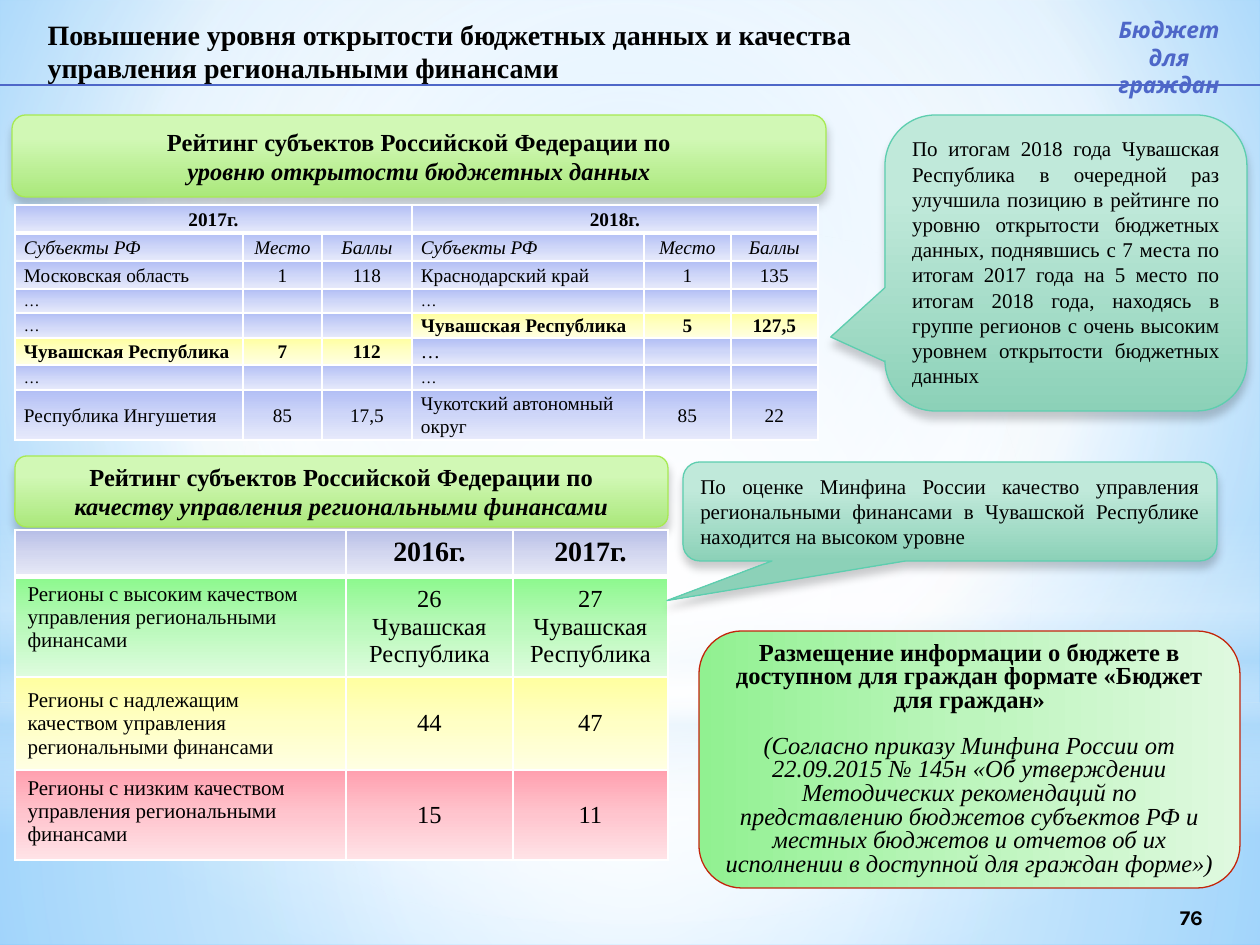
from lxml import etree
from pptx import Presentation, util as u
from pptx.dml.color import RGBColor
from pptx.enum import shapes, text
from pptx.oxml.ns import qn

# Content
TITLE = "Повышение уровня открытости бюджетных данных и качества управления региональными финансами"
BADGE = ["Бюджет", "для граждан"]
PAGE_NUMBER = "76"
RATING = "Рейтинг субъектов Российской Федерации по"
REGION = "Чувашская Республика"
HEADINGS = [  # box, second line
    ((12, 115, 814, 82), "уровню открытости бюджетных данных"),
    ((15, 456, 653, 71), "качеству управления региональными финансами"),
]
CALLOUTS = [  # box, adjustments, text
    ((683, 462, 534, 99), (-0.53, 0.9, 0.17),
     "По оценке Минфина России качество управления региональными финансами в Чувашской Республике "
     "находится на высоком уровне"),
    ((885, 115, 362, 296), (-0.65, 0.25, 0.17),
     "По итогам 2018 года Чувашская Республика в очередной раз улучшила позицию в рейтинге по уровню "
     "открытости бюджетных данных, поднявшись с 7 места по итогам 2017 года на 5 место по итогам 2018 "
     "года, находясь в группе регионов с очень высоким уровнем открытости бюджетных данных"),
]
OPENNESS = [
    ["2017г.", "", "", "2018г.", "", ""],
    ["Субъекты РФ", "Место", "Баллы"] * 2,
    ["Московская область", "1", "118", "Краснодарский край", "1", "135"],
    ["…", "", "", "…", "", ""],
    ["…", "", "", REGION, "5", "127,5"],
    [REGION, "7", "112", "…", "", ""],
    ["…", "", "", "…", "", ""],
    ["Республика Ингушетия", "85", "17,5", "Чукотский автономный округ", "85", "22"],
]
QUALITY = [  # fill, cells
    ("header", ["", "2016г.", "2017г."]),
    ("green", ["Регионы с высоким качеством управления региональными финансами",
               "26\n" + REGION, "27\n" + REGION]),
    ("yellow", ["Регионы с надлежащим качеством управления региональными финансами", "44", "47"]),
    ("red", ["Регионы с низким качеством управления региональными финансами", "15", "11"]),
]
NOTICE = [
    "Размещение информации о бюджете в доступном для граждан формате «Бюджет для граждан»",
    "(Согласно приказу Минфина России от 22.09.2015 № 145н «Об утверждении Методических рекомендаций "
    "по представлению бюджетов субъектов РФ и местных бюджетов и отчетов об их исполнении в доступной "
    "для граждан форме»)",
]


class Theme:
    body, accent = "Times New Roman", "Karla"
    black, blue, white = "000000", "4E67C8", "FFFFFF"
    lime_line, mint_line, red_line = "A7EA52", "5DCEAF", "C3260C"
    tiny, small, normal, badge, large, title = 9, 11, 12, 13, 14, 16
    gradients = {  # stops: position, colour, opacity
        "lime": [(28, "D1F8B5"), (100, "AAE87B")],
        "mint": [(28, "C0E9DA"), (100, "8CD1B8")],
        "notice": [(0, "91F191"), (50, "BDF5BD"), (100, "DFF9DF")],
        "blue": [(0, "B2BEF5"), (50, "CED6F8"), (100, "E7EAFB")],
        "header": [(0, "B7BEE7"), (50, "D2D6EF"), (100, "E8EAF7")],
        "green": [(0, "8CF98D"), (50, "BAF9BB"), (100, "DEFCDE")],
        "yellow": [(0, "FFFFA0"), (50, "FFFFC5"), (100, "FFFFE3")],
        "red": [(0, "FFA0AF"), (50, "FFC5CE"), (100, "FFE3E7")],
        "page": [(0, "9ED5FF"), (60, "FFFFFF"), (100, "5BB9FF")],
        "floor": [(0, "FFFFFF", 91), (37, "FFFFFF", 76), (100, "B4DCFA", 79)],
        "sky": [(0, "FFFFFF", 89), (48, "FFFFFF", 62), (100, "B4DCFA", 79)],
        "horizon": [(0, "FFFFFF", 0), (29, "FFFFFF", 30), (45, "B4DCFA", 40),
                    (55, "FFFFFF", 26), (65, "B4DCFA", 60), (100, "FFFFFF", 0)],
        "glow": [(0, "FFFFFF", 100), (56, "FFFFFF", 0)],
    }


Shape, Align, Anchor = shapes.MSO_SHAPE, text.PP_ALIGN, text.MSO_ANCHOR
CENTRE = (50, 50, 50, 50)
BACKDROP = [  # shape, box, gradient, focus
    (Shape.RECTANGLE, (0, 703, 1260, 242), "floor", CENTRE),
    (Shape.RECTANGLE, (0, 0, 1260, 703), "sky", CENTRE),
    (Shape.RECTANGLE, (0, 519, 1260, 315), "horizon", None),
    (Shape.OVAL, (0, 220, 1260, 703), "glow", CENTRE),
]


def px(value):
    return u.Emu(round(value * 914400 / 126))


def add(parent, tag, **attributes):
    return etree.SubElement(parent, qn(tag), {k: str(v) for k, v in attributes.items()})


def add_colour(parent, colour, opacity=100):
    element = add(parent, "a:srgbClr", val=colour)
    if opacity < 100:
        add(element, "a:alpha", val=opacity * 1000)


def paint(fill, properties, name, angle=90, focus=None):
    """Replace a solid fill by a linear gradient, or a circular one around focus."""
    fill.solid()
    solid = properties.find(qn("a:solidFill"))
    gradient = etree.Element(qn("a:gradFill"), rotWithShape="1")
    stops = add(gradient, "a:gsLst")
    for position, *colour in Theme.gradients[name]:
        add_colour(add(stops, "a:gs", pos=position * 1000), *colour)
    if focus:
        circle = add(gradient, "a:path", path="circle")
        add(circle, "a:fillToRect", **{side: v * 1000 for side, v in zip("ltrb", focus)})
    else:
        add(gradient, "a:lin", ang=angle * 60000, scaled=0)
    properties.replace(solid, gradient)


def write(frame, lines, layout=None, **common):
    """Each line is a text or a (text, format) pair; layout holds paragraph values."""
    for index, line in enumerate(lines):
        content, own = (line, {}) if isinstance(line, str) else line
        style = {"name": Theme.body, "size": Theme.normal, "colour": Theme.black, **common, **own}
        paragraph = frame.paragraphs[0] if index == 0 else frame.add_paragraph()
        for key, value in (layout or {}).items():
            setattr(paragraph, key, value)
        if not content:
            paragraph._p.get_or_add_endParaRPr().set("sz", str(style["size"] * 100))
            continue
        run = paragraph.add_run()
        run.text = content
        run.font.color.rgb = RGBColor.from_string(style.pop("colour"))
        style["size"] = u.Pt(style["size"])
        for key, value in style.items():
            setattr(run.font, key, value)


def add_panel(slide, kind, box, gradient, line=None, shadow=False, adjustments=(), **direction):
    shape = slide.shapes.add_shape(kind, *map(px, box))
    shape.shadow.inherit = False
    for index, value in enumerate(adjustments):
        shape.adjustments[index] = value
    paint(shape.fill, shape._element.spPr, gradient, **direction)
    if line:
        shape.line.color.rgb = RGBColor.from_string(line)
        shape.line.width = u.Pt(0.75)
    else:
        shape.line.fill.background()
    if shadow:
        effects = shape._element.spPr.find(qn("a:effectLst"))
        add_colour(add(effects, "a:outerShdw", blurRad=u.Pt(5), dist=u.Pt(4), dir=90 * 60000,
                       algn="ctr", rotWithShape=0), Theme.black, 20)
    shape.text_frame.word_wrap = True
    return shape


def add_label(slide, box, lines, anchor=Anchor.TOP, **style):
    frame = slide.shapes.add_textbox(*map(px, box)).text_frame
    frame.word_wrap, frame.vertical_anchor = True, anchor
    write(frame, lines, {"alignment": Align.CENTER}, name=Theme.accent, bold=True, **style)


def add_grid(slide, left, top, widths, heights):
    box = (left, top, sum(widths), sum(heights))
    table = slide.shapes.add_table(len(heights), len(widths), *map(px, box)).table
    table.first_row = table.horz_banding = False
    for column, width in zip(table.columns, widths):
        column.width = px(width)
    for row, height in zip(table.rows, heights):
        row.height = px(height)
    return table


def format_cell(cell, gradient, header):
    properties = cell._tc.get_or_add_tcPr()
    for side in "LRTB":
        width = 3 if header and side == "B" else 1
        border = add(properties, f"a:ln{side}", w=u.Pt(width))
        add_colour(add(border, "a:solidFill"), Theme.white)
    paint(cell.fill, properties, gradient)


def add_openness_table(slide):
    table = add_grid(slide, 15, 205, (228, 79, 90, 232, 87, 87), (28, 28, 28, 24, 25, 27, 25, 50))
    for r, row in enumerate(OPENNESS):
        for c, content in enumerate(row):
            cell, marked = table.cell(r, c), row[c // 3 * 3] == REGION
            format_cell(cell, "yellow" if marked else "blue", r == 0)
            cell.vertical_anchor = Anchor.MIDDLE
            cell.margin_left = cell.margin_right = px(9)
            cell.margin_top = cell.margin_bottom = 0
            tiny = not content or (content == "…" and row[0] != REGION)
            centred = r == 0 or c % 3
            write(cell.text_frame, [content],
                  {"alignment": Align.CENTER if centred else Align.LEFT, "line_spacing": 1.07},
                  size=Theme.tiny if tiny else Theme.small, bold=r == 0 or marked, italic=r == 1)
    for first in (0, 3):
        table.cell(0, first).merge(table.cell(0, first + 2))


def add_quality_table(slide):
    table = add_grid(slide, 15, 530, (331, 167, 155), (46, 101, 93, 90))
    for r, (gradient, row) in enumerate(QUALITY):
        for c, content in enumerate(row):
            cell, header = table.cell(r, c), r == 0
            format_cell(cell, gradient, header)
            if not header and (c or gradient == "yellow"):
                cell.vertical_anchor = Anchor.MIDDLE
            size = Theme.title if header else Theme.large if c else Theme.normal
            write(cell.text_frame, content.split("\n"),
                  {"alignment": Align.CENTER if c else Align.LEFT}, size=size, bold=header)


def main():
    presentation = Presentation()
    presentation.slide_width, presentation.slide_height = px(1260), px(945)
    slide = presentation.slides.add_slide(presentation.slide_layouts[5])

    # Background
    fill = slide.background.fill
    fill.solid()
    paint(fill, slide._element.find(".//" + qn("p:bgPr")), "page", focus=(20, 10, 20, 60))
    for kind, box, gradient, focus in BACKDROP:
        add_panel(slide, kind, box, gradient, focus=focus)

    # Title, brought in front of the background
    title = slide.shapes.title
    slide.shapes._spTree.append(title._element)
    title.left, title.top, title.width, title.height = map(px, (35, 11, 951, 74))
    title.text_frame.vertical_anchor = Anchor.TOP
    write(title.text_frame, [TITLE], {"alignment": Align.LEFT}, size=Theme.title, bold=True)

    # Rule, badge and page number
    rule = slide.shapes.add_connector(shapes.MSO_CONNECTOR.STRAIGHT, *map(px, (0, 85, 1260, 85)))
    rule.line.color.rgb = RGBColor.from_string(Theme.blue)
    rule.line.width = u.Pt(0.75)
    add(rule._element.spPr, "a:effectLst")
    add_label(slide, (1085, 10, 168, 68), BADGE, size=Theme.badge, colour=Theme.blue, italic=True)
    add_label(slide, (1122, 892, 139, 50), [PAGE_NUMBER], Anchor.MIDDLE)

    # Headings and tables
    for box, subject in HEADINGS:
        shape = add_panel(slide, Shape.ROUNDED_RECTANGLE, box, "lime", Theme.lime_line, True)
        write(shape.text_frame, [RATING, (subject, {"italic": True})],
              {"alignment": Align.CENTER}, size=Theme.large, bold=True)
    add_openness_table(slide)
    add_quality_table(slide)

    # Callouts and notice
    for box, adjustments, content in CALLOUTS:
        shape = add_panel(slide, Shape.ROUNDED_RECTANGULAR_CALLOUT, box, "mint", Theme.mint_line,
                          True, adjustments)
        shape.text_frame.vertical_anchor = Anchor.TOP
        write(shape.text_frame, [content], {"alignment": Align.JUSTIFY})
    notice = add_panel(slide, Shape.ROUNDED_RECTANGLE, (699, 631, 541, 257), "notice",
                       Theme.red_line, angle=0)
    write(notice.text_frame, [(NOTICE[0], {"bold": True}), (NOTICE[1], {"italic": True})],
          {"alignment": Align.CENTER, "line_spacing": 0.8}, size=Theme.large)
    notice.text_frame.paragraphs[1].space_before = u.Pt(13)

    presentation.save("out.pptx")


if __name__ == "__main__":
    main()
